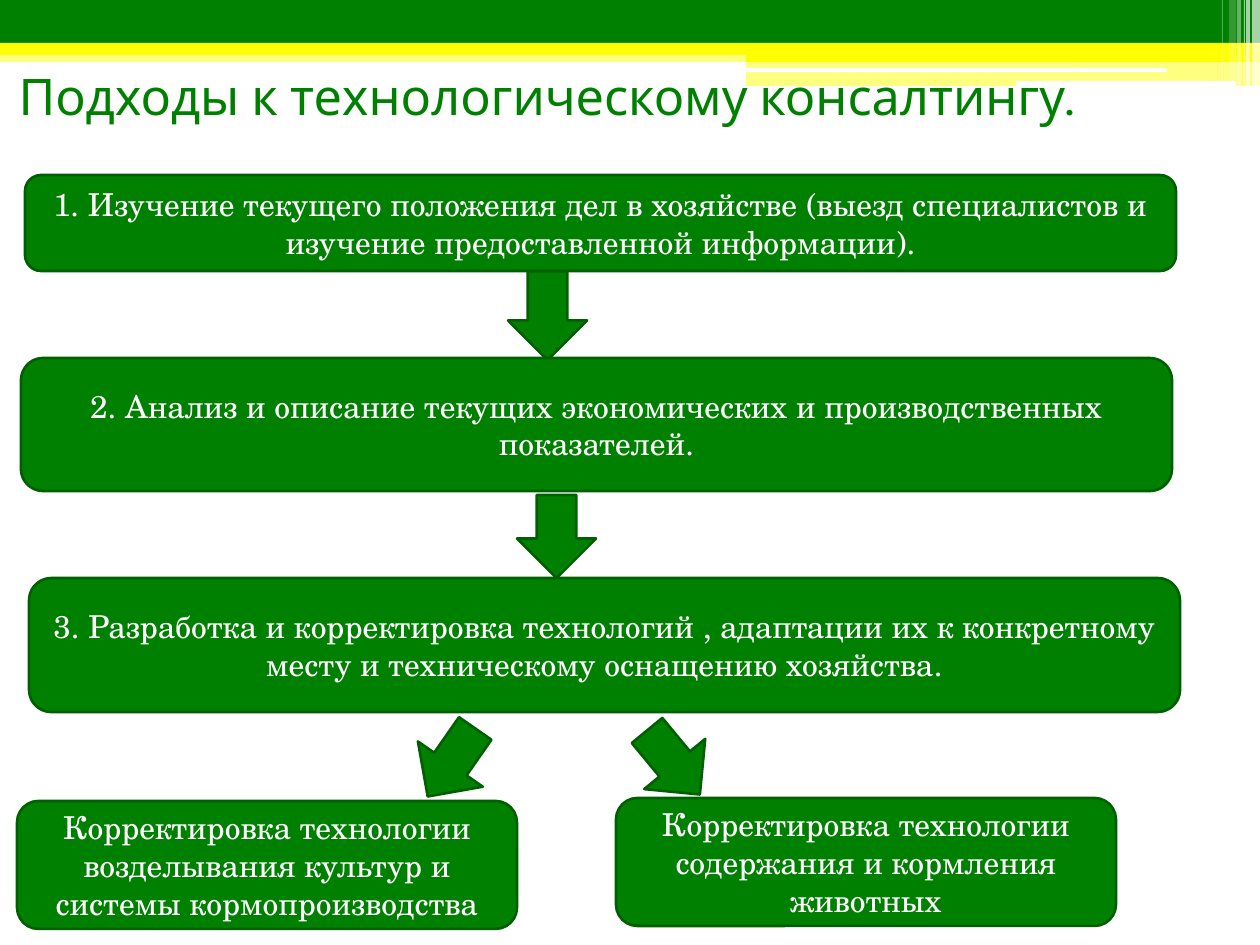
"""Build the slide on approaches to technological consulting."""
from dataclasses import dataclass

from lxml import etree
from pptx import Presentation
from pptx.dml.color import RGBColor
from pptx.enum.shapes import MSO_SHAPE
from pptx.enum.text import MSO_ANCHOR, PP_ALIGN
from pptx.oxml.ns import qn
from pptx.util import Emu, Pt

RECT = MSO_SHAPE.RECTANGLE
ROUND = MSO_SHAPE.ROUNDED_RECTANGLE
DOWN = MSO_SHAPE.DOWN_ARROW
LEFT, CENTER = PP_ALIGN.LEFT, PP_ALIGN.CENTER
MIDDLE = MSO_ANCHOR.MIDDLE

PX = 914400 / 126
TITLE_FONT, BODY_FONT = "Karla", "TeX Gyre Schola"
COLORS = {"green": "008000", "edge": "005F00", "yellow": "FFFF00", "white": "FFFFFF"}


@dataclass
class Band:
    x: int
    y: int
    w: int
    h: int
    color: str
    alpha: int = 100
    kind: int = RECT


@dataclass
class Step:
    x: int
    y: int
    w: int
    h: int
    text: str


@dataclass
class Arrow:
    x: int
    y: int
    h: int
    angle: float = 0


BANDS = [
    Band(0, 50, 1260, 12, "yellow", 50),
    Band(0, 0, 1260, 43, "green"),
    Band(0, 43, 1260, 12, "yellow"),
    Band(746, 49, 514, 13, "yellow"),
    Band(746, 61, 514, 25, "yellow", 50),
    Band(745, 68, 422, 4, "white", kind=ROUND),
    Band(1016, 81, 220, 5, "white", kind=ROUND),
    Band(1252, 0, 8, 86, "white", 65),
    Band(1246, 0, 4, 86, "white", 65),
    Band(1244, 0, 1, 86, "white", 60),
    Band(1237, 0, 4, 86, "white", 40),
    Band(1229, 0, 7, 81, "white", 20),
    Band(1222, 0, 1, 81, "white", 30),
]
ARROWS = [
    Arrow(508, 271, 89),
    Arrow(517, 495, 83),
    Arrow(412, 721, 83, 34.9),
    Arrow(634, 721, 83, 320.5),
]
STEPS = [
    Step(25, 175, 1151, 96, "1. Изучение текущего положения дел в хозяйстве "
         "(выезд специалистов и изучение предоставленной информации)."),
    Step(21, 358, 1151, 133, "2. Анализ и описание текущих экономических "
         "и производственных показателей."),
    Step(29, 578, 1151, 134, "3. Разработка и корректировка технологий , адаптации их "
         "к конкретному месту и техническому оснащению хозяйства."),
    Step(17, 801, 500, 128, "Корректировка технологии возделывания культур "
         "и системы кормопроизводства"),
    Step(616, 798, 500, 128, "Корректировка технологии содержания и кормления животных"),
]


def px(n: int) -> Emu:
    return Emu(round(n * PX))


def rgb(name: str) -> RGBColor:
    return RGBColor.from_string(COLORS[name])


def add_shape(slide, kind: int, x: int, y: int, w: int, h: int, color: str):
    sp = slide.shapes.add_shape(kind, px(x), px(y), px(w), px(h))
    sp.shadow.inherit = False
    sp.fill.solid()
    sp.fill.fore_color.rgb = rgb(color)
    return sp


def outline(sp) -> None:
    sp.line.color.rgb = rgb("edge")
    sp.line.width = Pt(1.5)


def set_text(sp, text: str, font: str, size: float, color: str, align: int) -> None:
    tf = sp.text_frame
    tf.text = text
    tf.word_wrap = True
    tf.vertical_anchor = MIDDLE
    p = tf.paragraphs[0]
    p.alignment = align
    r = p.runs[0]
    r.font.name = font
    r.font.size = Pt(size)
    r.font.color.rgb = rgb(color)


def draw_band(slide, band: Band) -> None:
    sp = add_shape(slide, band.kind, band.x, band.y, band.w, band.h, band.color)
    sp.line.fill.background()
    if band.alpha < 100:
        clr = sp.fill._xPr.find(qn("a:solidFill"))[0]
        etree.SubElement(clr, qn("a:alpha")).set("val", str(band.alpha * 1000))


def draw_arrow(slide, arrow: Arrow) -> None:
    sp = add_shape(slide, DOWN, arrow.x, arrow.y, 79, arrow.h, "green")
    sp.rotation = arrow.angle
    outline(sp)


def draw_step(slide, step: Step) -> None:
    sp = add_shape(slide, ROUND, step.x, step.y, step.w, step.h, "green")
    outline(sp)
    set_text(sp, step.text, BODY_FONT, 18, "white", CENTER)


def draw_title(slide, text: str) -> None:
    sp = slide.shapes.title
    sp.left, sp.top, sp.width, sp.height = px(6), px(66), px(1260), px(59)
    set_text(sp, text, TITLE_FONT, 28.8, "green", LEFT)
    slide.shapes._spTree.append(sp._element)


def main() -> None:
    prs = Presentation()
    prs.slide_width, prs.slide_height = px(1260), px(945)
    slide = prs.slides.add_slide(prs.slide_layouts[5])
    for band in BANDS:
        draw_band(slide, band)
    draw_title(slide, "Подходы к технологическому консалтингу.")
    for arrow in ARROWS:
        draw_arrow(slide, arrow)
    for step in STEPS:
        draw_step(slide, step)
    prs.save("out.pptx")


if __name__ == "__main__":
    main()
